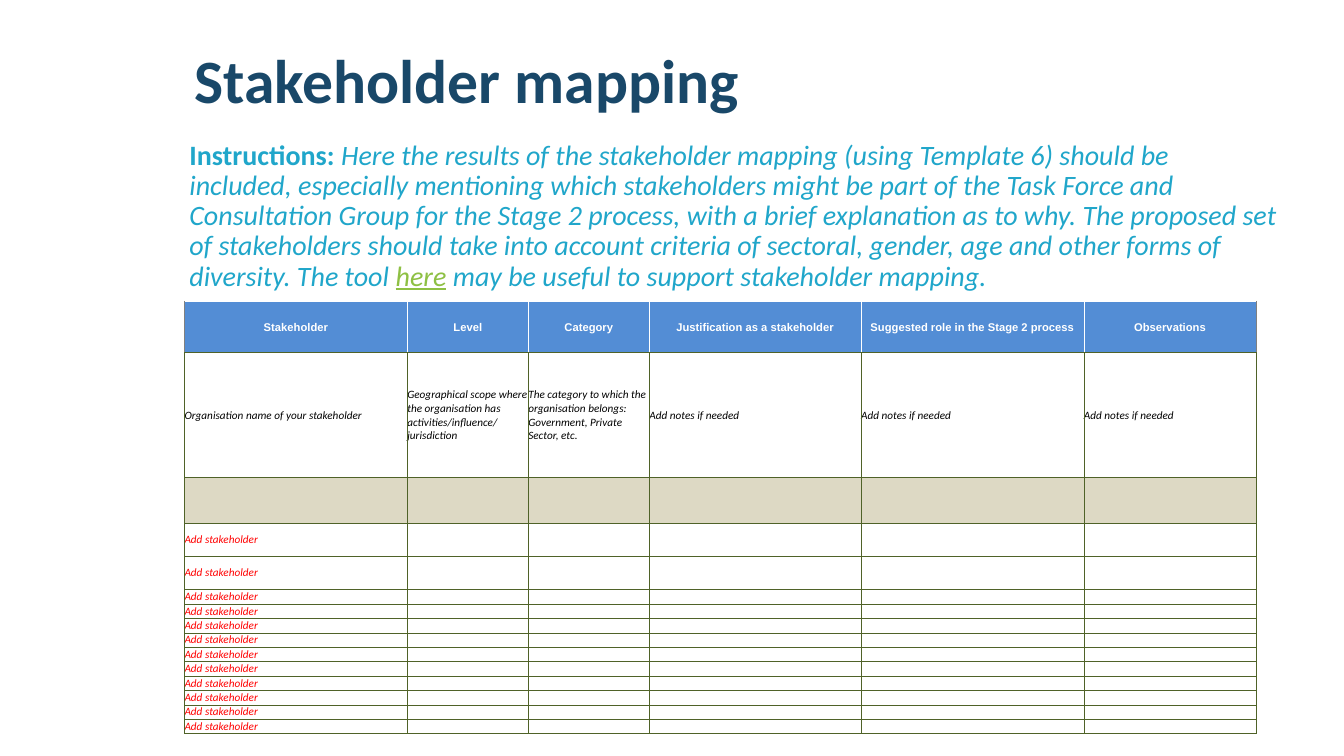
import lxml.etree
import pptx
import pptx.dml.color
import pptx.enum.text
import pptx.oxml.ns
import pptx.util

Inches = pptx.util.Inches
Pt = pptx.util.Pt
RGBColor = pptx.dml.color.RGBColor
qn = pptx.oxml.ns.qn
MIDDLE = pptx.enum.text.MSO_ANCHOR.MIDDLE
CENTER = pptx.enum.text.PP_ALIGN.CENTER

NAVY = RGBColor(0x19, 0x48, 0x69)
CYAN = RGBColor(0x20, 0xA6, 0xCA)
LIME = RGBColor(0x8E, 0xC0, 0x44)
BLUE = RGBColor(0x53, 0x8D, 0xD5)
SAND = RGBColor(0xDD, 0xD9, 0xC4)
OLIVE = RGBColor(0x4F, 0x62, 0x28)
GRAY = RGBColor(0x80, 0x80, 0x80)
WHITE = RGBColor(0xFF, 0xFF, 0xFF)
BLACK = RGBColor(0, 0, 0)
RED = RGBColor(0xFF, 0, 0)

COLUMN_WIDTHS = [2.21, 1.2, 1.2, 2.1, 2.21, 1.71]
TABLE_HEIGHT = 4.29
TALL_ROWS = [0.51, 1.24, 0.45, 0.33, 0.33]
SHORT_ROW_COUNT = 10
SHORT_ROW = (TABLE_HEIGHT - sum(TALL_ROWS)) / SHORT_ROW_COUNT
ROW_HEIGHTS = TALL_ROWS + [SHORT_ROW] * SHORT_ROW_COUNT

HEADERS = ["Stakeholder", "Level", "Category", "Justification as a stakeholder",
           "Suggested role in the Stage 2 process", "Observations"]
GUIDANCE = ["Organisation name of your stakeholder",
            "Geographical scope where the organisation has activities/influence/ jurisdiction",
            "The category to which the organisation belongs: Government, Private Sector, etc."]
GUIDANCE += ["Add notes if needed"] * 3


def add_run(p, text, size, color, font="Calibri", bold=False, italic=False, underline=False):
    r = p.add_run()
    r.text = text
    r.font.size = Pt(size)
    r.font.name = font
    r.font.color.rgb = color
    r.font.bold = bold
    r.font.italic = italic
    r.font.underline = underline


def add_text_box(s, left, top, width, height):
    tf = s.shapes.add_textbox(Inches(left), Inches(top), Inches(width), Inches(height)).text_frame
    tf.word_wrap = True
    p = tf.paragraphs[0]
    p.line_spacing = 0.9
    return tf, p


def add_border(cell, side, color):
    line = lxml.etree.SubElement(cell._tc.get_or_add_tcPr(), qn("a:ln" + side), w=str(Pt(0.5)))
    fill = lxml.etree.SubElement(line, qn("a:solidFill"))
    lxml.etree.SubElement(fill, qn("a:srgbClr"), val=str(color))


def style_cell(cell, borders, fill=None):
    cell.margin_left = cell.margin_right = cell.margin_top = cell.margin_bottom = 0
    cell.vertical_anchor = MIDDLE
    for side, color in borders.items():
        add_border(cell, side, color)
    if fill is None:
        cell.fill.background()
    else:
        cell.fill.solid()
        cell.fill.fore_color.rgb = fill


def add_header_cell(cell, col):
    last = len(HEADERS) - 1
    style_cell(cell, {"L": GRAY if col == 0 else WHITE,
                      "R": GRAY if col == last else WHITE, "B": OLIVE}, BLUE)
    p = cell.text_frame.paragraphs[0]
    p.alignment = CENTER
    add_run(p, HEADERS[col], 8, WHITE, font="Arial", bold=True)


def add_body_cell(cell, text, color, fill):
    style_cell(cell, dict.fromkeys("LRTB", OLIVE), fill)
    p = cell.text_frame.paragraphs[0]
    if text:
        add_run(p, text, 8, color, italic=True)
    else:
        lxml.etree.SubElement(p._p, qn("a:endParaRPr"), sz="800")


def add_stakeholder_table(s):
    table = s.shapes.add_table(len(ROW_HEIGHTS), len(COLUMN_WIDTHS), Inches(1.83), Inches(2.99),
                               Inches(sum(COLUMN_WIDTHS)), Inches(TABLE_HEIGHT)).table
    table.horz_banding = False
    for column, width in zip(table.columns, COLUMN_WIDTHS):
        column.width = Inches(width)
    for row, height in zip(table.rows, ROW_HEIGHTS):
        row.height = Inches(height)
    blank = [""] * len(HEADERS)
    entry = ["Add stakeholder"] + blank[1:]
    body = [(GUIDANCE, BLACK, None), (blank, BLACK, SAND)]
    body += [(entry, RED, None)] * (len(ROW_HEIGHTS) - 3)
    for col in range(len(HEADERS)):
        add_header_cell(table.cell(0, col), col)
        for row, (texts, color, fill) in enumerate(body, 1):
            add_body_cell(table.cell(row, col), texts[col], color, fill)


def add_title(s):
    tf, p = add_text_box(s, 1.83, 0.1, 11.5, 1.45)
    tf.vertical_anchor = MIDDLE
    add_run(p, "Stakeholder mapping", 44, NAVY, bold=True)


def add_instructions(s):
    tf, p = add_text_box(s, 1.78, 1.35, 11, 5.28)
    add_run(p, "Instructions:", 20, CYAN, bold=True)
    add_run(p, " Here the results of the stakeholder mapping (using Template 6) should be included, "
            "especially mentioning which stakeholders might be part of the Task Force and "
            "Consultation Group for the Stage 2 process, with a brief explanation as to why. "
            "The proposed set of stakeholders should take into account criteria of sectoral, "
            "gender, age and other forms of diversity. The tool ", 20, CYAN, italic=True)
    add_run(p, "here", 20, LIME, italic=True, underline=True)
    add_run(p, " may be useful to support stakeholder mapping.", 20, CYAN, italic=True)


def main():
    prs = pptx.Presentation()
    prs.slide_width = Inches(13.33)
    prs.slide_height = Inches(7.5)
    s = prs.slides.add_slide(prs.slide_layouts[6])
    add_title(s)
    add_instructions(s)
    add_stakeholder_table(s)
    prs.save("out.pptx")


if __name__ == "__main__":
    main()
